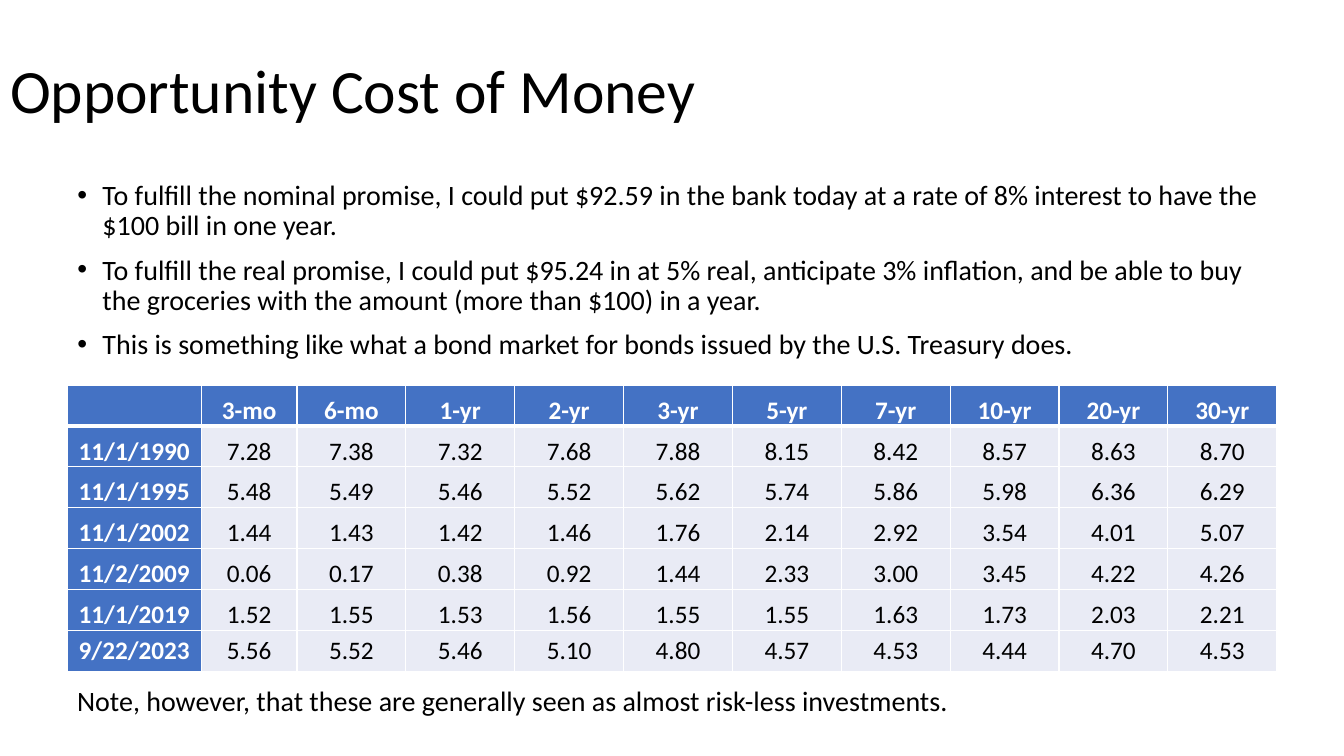
from lxml import etree
from pptx import Presentation
from pptx import util as u
from pptx.dml import color
from pptx.enum import text
from pptx.oxml import ns

# Theme: colours, type sizes, spacing
THEME = {
    "font": "Calibri", "ink": "000000", "paper": "FFFFFF",
    "head": "4472C4", "band": "E9EBF5",
    "title": 44, "body": 20, "cell": 18,
}

# Grid: 20 columns by 30 rows
WIDE, HIGH = u.Inches(13.333), u.Inches(7.5)
COLS, ROWS = 20, 30

TITLE = "Opportunity Cost of Money"
POINTS = [
    "To fulfill the nominal promise, I could put $92.59 in the bank today at a rate of 8% "
    "interest to have the $100 bill in one year.",
    "To fulfill the real promise, I could put $95.24 in at 5% real, anticipate 3% inflation, "
    "and be able to buy the groceries with the amount (more than $100) in a year.",
    "This is something like what a bond market for bonds issued by the U.S. Treasury does.",
]
NOTE = "Note, however, that these are generally seen as almost risk-less investments."
TERMS = ["", "3-mo", "6-mo", "1-yr", "2-yr", "3-yr", "5-yr", "7-yr", "10-yr", "20-yr", "30-yr"]
YIELDS = {
    "11/1/1990": "7.28 7.38 7.32 7.68 7.88 8.15 8.42 8.57 8.63 8.70",
    "11/1/1995": "5.48 5.49 5.46 5.52 5.62 5.74 5.86 5.98 6.36 6.29",
    "11/1/2002": "1.44 1.43 1.42 1.46 1.76 2.14 2.92 3.54 4.01 5.07",
    "11/2/2009": "0.06 0.17 0.38 0.92 1.44 2.33 3.00 3.45 4.22 4.26",
    "11/1/2019": "1.52 1.55 1.53 1.56 1.55 1.55 1.63 1.73 2.03 2.21",
    "9/22/2023": "5.56 5.52 5.46 5.10 4.80 4.57 4.53 4.44 4.70 4.53",
}


def grid(col, row, wide, high):
    """Left, top, width and height from grid columns and rows."""
    return (round(WIDE * col / COLS), round(HIGH * row / ROWS),
            round(WIDE * wide / COLS), round(HIGH * high / ROWS))


def apply(item, form):
    for key, value in form.items():
        setattr(item, key, value)


def place(shape, box):
    apply(shape, dict(zip(("left", "top", "width", "height"), box)))


def write(para, words, size, tint="ink", bold=False, **form):
    """Put one formatted run into a paragraph."""
    apply(para, form)
    run = para.add_run()
    run.text = words
    apply(run.font, {"name": THEME["font"], "size": u.Pt(THEME[size]), "bold": bold})
    run.font.color.rgb = color.RGBColor.from_string(THEME[tint])


def add_title(slide, words, box):
    shape = slide.shapes.title
    place(shape, box)
    apply(shape.text_frame, {"vertical_anchor": text.MSO_ANCHOR.MIDDLE, "word_wrap": True,
                             "auto_size": text.MSO_AUTO_SIZE.NONE})
    write(shape.text_frame.paragraphs[0], words, "title",
          alignment=text.PP_ALIGN.LEFT, line_spacing=0.9)


def add_list(slide, points, box):
    shape = slide.placeholders[1]
    place(shape, box)
    frame = shape.text_frame
    apply(frame, {"word_wrap": True, "auto_size": text.MSO_AUTO_SIZE.NONE})
    for i, point in enumerate(points):
        para = frame.add_paragraph() if i else frame.paragraphs[0]
        write(para, point, "body", line_spacing=0.9, space_before=u.Pt(10))
        # Hanging indent for the bullet
        props = para._p.get_or_add_pPr()
        props.set("marL", str(u.Inches(0.25)))
        props.set("indent", str(-u.Inches(0.25)))


def add_note(slide, words, box):
    frame = slide.shapes.add_textbox(*box).text_frame
    frame.word_wrap = True
    write(frame.paragraphs[0], words, "body")


def edge(cell, side, width):
    """Draw one cell border; borders come before the fill."""
    line = etree.SubElement(cell._tc.get_or_add_tcPr(), ns.qn("a:" + side), w=str(u.Pt(width)))
    fill = etree.SubElement(line, ns.qn("a:solidFill"))
    etree.SubElement(fill, ns.qn("a:srgbClr"), val=THEME["paper"])


def fill_cell(cell, words, row, col, last):
    head = row == 0 or col == 0
    middle = row in (0, last)
    anchor = text.MSO_ANCHOR.MIDDLE if middle else text.MSO_ANCHOR.BOTTOM
    apply(cell, {"vertical_anchor": anchor})
    if row < last:
        apply(cell, {"margin_top": u.Inches(0.1), "margin_bottom": 0})
    for side, width in {"lnL": 1, "lnR": 1, "lnT": 3 if row == 1 else 1,
                        "lnB": 3 if row == 0 else 1}.items():
        edge(cell, side, width)
    cell.fill.solid()
    cell.fill.fore_color.rgb = color.RGBColor.from_string(THEME["head" if head else "band"])
    if words:
        write(cell.text_frame.paragraphs[0], words, "cell", "paper" if head else "ink", head,
              alignment=text.PP_ALIGN.CENTER)


def add_rates(slide, rows, box):
    table = slide.shapes.add_table(len(rows), len(rows[0]), *box).table
    table.horz_banding = False
    # A wide date column, a narrow first term, equal terms after that
    widths = [1.33, 0.95] + [1.08] * (len(rows[0]) - 2)
    for col, width in zip(table.columns, widths):
        col.width = u.Inches(width)
    for r, row in enumerate(rows):
        for c, words in enumerate(row):
            fill_cell(table.cell(r, c), words, r, c, len(rows) - 1)


def main():
    deck = Presentation()
    apply(deck, {"slide_width": WIDE, "slide_height": HIGH})
    slide = deck.slides.add_slide(deck.slide_layouts[1])
    rows = [TERMS] + [[date, *rates.split()] for date, rates in YIELDS.items()]
    add_title(slide, TITLE, grid(0, 0, 18.63, 7.4))
    add_list(slide, POINTS, grid(1, 7, 18, 8))
    add_rates(slide, rows, grid(1, 15.28, 18, 11.2))
    add_note(slide, NOTE, grid(1, 26.92, 18, 1.75))
    deck.save("out.pptx")


if __name__ == "__main__":
    main()
